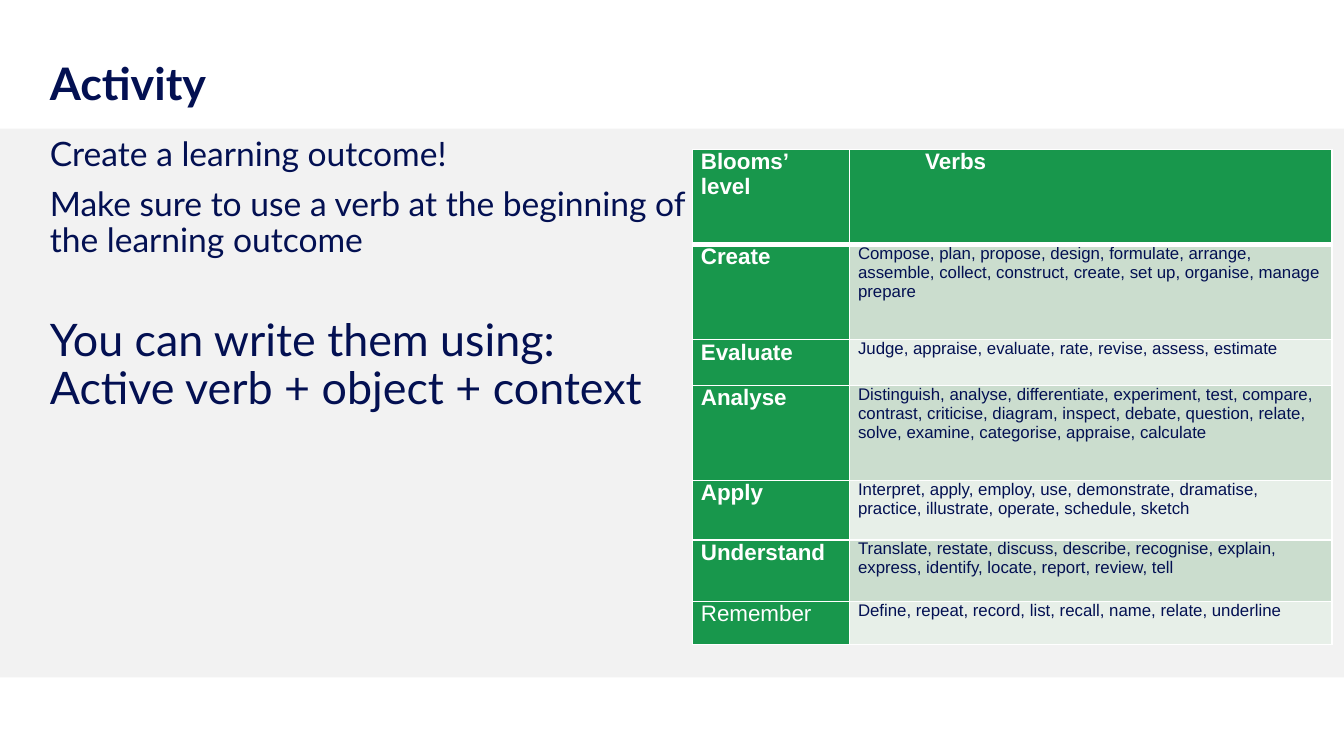
from lxml.etree import SubElement
from pptx import Presentation
from pptx.dml.color import RGBColor
from pptx.enum.shapes import MSO_SHAPE
from pptx.enum.text import MSO_ANCHOR, MSO_AUTO_SIZE, PP_ALIGN
from pptx.oxml import parse_xml
from pptx.oxml.ns import nsdecls, qn
from pptx.util import Pt

HUES = {"navy": "031052", "green": "18974C", "dark": "CBDDCE",
        "light": "E7EFE8", "grey": "F2F2F2", "white": "FFFFFF"}
COLS = [84.2, 258.5]
ROWS = [51, 51, 24.5, 51, 31.7, 33.1, 23]
LEVELS = [
    ("Blooms’ level", "Verbs"),
    ("Create", "Compose, plan, propose, design, formulate, arrange, assemble, "
               "collect, construct, create, set up, organise, manage\nprepare"),
    ("Evaluate", "Judge, appraise, evaluate, rate, revise, assess, estimate"),
    ("Analyse", "Distinguish, analyse, differentiate, experiment, test, compare, "
                "contrast, criticise, diagram, inspect, debate, question, relate, "
                "solve, examine, categorise, appraise, calculate"),
    ("Apply", "Interpret, apply, employ, use, demonstrate, dramatise, practice, "
              "illustrate, operate, schedule, sketch"),
    ("Understand", "Translate, restate, discuss, describe, recognise, explain, "
                   "express, identify, locate, report, review, tell"),
    ("Remember", "Define, repeat, record, list, recall, name, relate, underline"),
]
# Text, size and space before
LINES = [("Create a learning outcome!", 18, 0),
         ("Make sure to use a verb at the beginning of the learning outcome", 18, 7.5),
         ("You can write them using:\vActive verb + object + context", 24, 30.7)]


def hue(name):
    return RGBColor.from_string(HUES[name])


def style(para, face, size, tone, bold=False):
    for run in para.runs:
        font = run.font
        font.name, font.size, font.bold = face, Pt(size), bold
        font.color.rgb = hue(tone)


def set_frame(frame, anchor):
    frame.word_wrap = True
    frame.auto_size = MSO_AUTO_SIZE.NONE
    frame.vertical_anchor = anchor
    frame.margin_left = 0
    frame.margin_right = Pt(7.2)
    frame.margin_top = frame.margin_bottom = Pt(3.6)


def add_band(slide, x, y, w, h):
    band = slide.shapes.add_shape(MSO_SHAPE.RECTANGLE, Pt(x), Pt(y), Pt(w), Pt(h))
    band.shadow.inherit = False
    band.fill.solid()
    band.fill.fore_color.rgb = hue("grey")
    band.line.fill.background()


def add_title(slide, x, y, w, h):
    title = slide.shapes.title
    title.left, title.top, title.width, title.height = Pt(x), Pt(y), Pt(w), Pt(h)
    frame = title.text_frame
    frame.text = "Activity"
    set_frame(frame, MSO_ANCHOR.BOTTOM)
    para = frame.paragraphs[0]
    para.alignment = PP_ALIGN.LEFT
    para.line_spacing = 0.9
    style(para, "Lato", 24, "navy", True)


def add_body(slide, x, y, w, h):
    frame = slide.shapes.add_textbox(Pt(x), Pt(y), Pt(w), Pt(h)).text_frame
    set_frame(frame, MSO_ANCHOR.TOP)
    for i, (text, size, gap) in enumerate(LINES):
        para = frame.add_paragraph() if i else frame.paragraphs[0]
        para.text = text
        para.line_spacing = 0.9
        para.space_before = Pt(gap)
        style(para, "Lato", size, "navy")


def set_edges(cell, top, base):
    """Draw white borders, with top and base as widths in points."""
    props = cell._tc.get_or_add_tcPr()
    for i, (side, width) in enumerate(zip("LRTB", (1, 1, top, base))):
        edge = parse_xml(f'<a:ln{side} {nsdecls("a")} w="{Pt(width)}"/>')
        fill = SubElement(edge, qn("a:solidFill"))
        SubElement(fill, qn("a:srgbClr"), val=HUES["white"])
        props.insert(i, edge)


def add_cell(cell, text, row, col):
    head = row == 0 or col == 0
    cell.margin_left = cell.margin_right = Pt(4.5)
    cell.margin_top = cell.margin_bottom = 0
    cell.fill.solid()
    cell.fill.fore_color.rgb = hue(
        "green" if head else "dark" if row % 2 else "light")
    cell.text_frame.text = text
    for para in cell.text_frame.paragraphs:
        if head:
            style(para, "Arial", 12, "white", text != "Remember")
        else:
            style(para, "Arial", 9, "navy")
    set_edges(cell, 3 if row == 1 else 1, 3 if row == 0 else 1)


def add_verbs(slide, x, y):
    table = slide.shapes.add_table(len(ROWS), len(COLS), Pt(x), Pt(y),
                                   Pt(sum(COLS)), Pt(sum(ROWS))).table
    for col, width in zip(table.columns, COLS):
        col.width = Pt(width)
    for row, height in zip(table.rows, ROWS):
        row.height = Pt(height)
    for r, texts in enumerate(LEVELS):
        for c, text in enumerate(texts):
            add_cell(table.cell(r, c), text, r, c)
    para = table.cell(0, 1).text_frame.paragraphs[0]
    para._p.get_or_add_pPr().set("indent", str(Pt(36)))


def main():
    deck = Presentation()
    deck.slide_width, deck.slide_height = Pt(720), Pt(405)
    slide = deck.slides.add_slide(deck.slide_layouts[5])
    add_band(slide, 0, 69, 720, 294)
    add_title(slide, 26.7, 21.6, 665, 41)
    add_body(slide, 26.7, 70, 358.5, 292)
    add_verbs(slide, 371, 80)
    deck.save("out.pptx")


if __name__ == "__main__":
    main()
